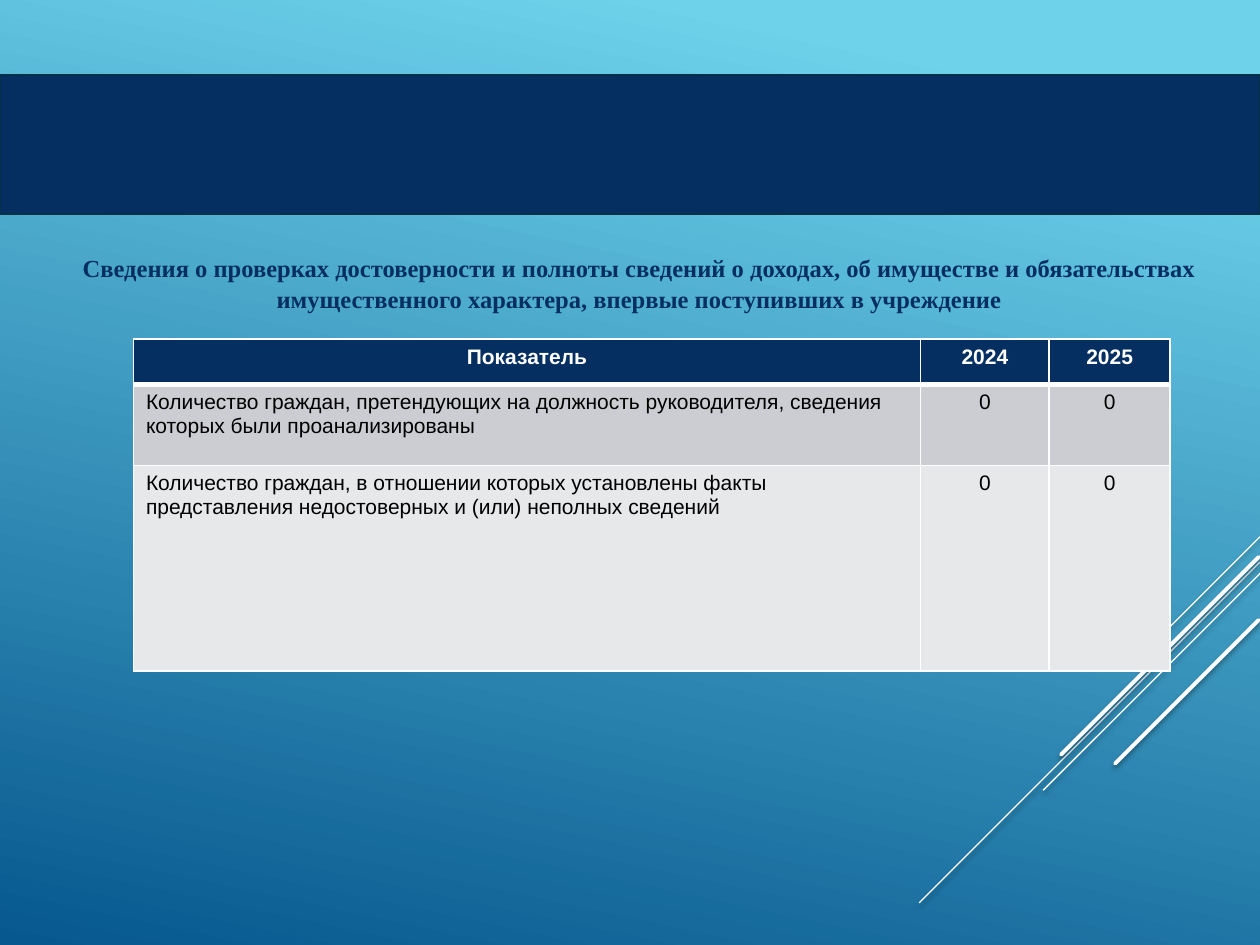
from lxml.etree import SubElement
from pptx import Presentation
from pptx.dml.color import RGBColor
from pptx.enum.shapes import MSO_CONNECTOR as Connector, MSO_SHAPE as Shape
from pptx.enum.text import MSO_ANCHOR as Anchor, MSO_AUTO_SIZE as AutoSize, PP_ALIGN as Align
from pptx.oxml.ns import qn
from pptx.util import Cm, Pt

NAVY, WHITE, BLACK = "052F61", "FFFFFF", "000000"
HEADING = (
    "Сведения о проверках достоверности и полноты сведений о доходах, об имуществе "
    "и обязательствах имущественного характера, впервые поступивших в учреждение"
)
ROWS = [
    ("Показатель", "2024", "2025"),
    ("Количество граждан, претендующих на должность руководителя, сведения "
     "которых были проанализированы", "0", "0"),
    ("Количество граждан, в отношении которых установлены факты представления "
     "недостоверных и (или) неполных сведений", "0", "0"),
]
ROW_FILLS = [NAVY, "CCCDD2", "E7E8EA"]
ROW_HEIGHTS = [0.92, 1.63, 4.15]
COLUMN_WIDTHS = [15.87, 2.59, 2.44]


def color(value):
    """Turn a hex string into a colour."""
    return RGBColor.from_string(value)


def add_run(para, text, font, size, value, bold):
    """Add one formatted run to a paragraph."""
    span = para.add_run()
    span.text = text
    span.font.name, span.font.size, span.font.bold = font, Pt(size), bold
    span.font.color.rgb = color(value)


def add_background(page):
    """Fill the page with a slanted blue gradient."""
    fill = page.background.fill
    fill.gradient()
    fill.gradient_angle = 258
    for stop, (position, value) in zip(fill.gradient_stops, [(0.1, "6ED2EB"), (1, "06588E")]):
        stop.position = position
        stop.color.rgb = color(value)


def add_shadow(line):
    """Give a line a soft shadow that falls straight down."""
    effects = SubElement(line._element.spPr, qn("a:effectLst"))
    shadow = SubElement(effects, qn("a:outerShdw"), blurRad=str(Pt(3.1)), dist=str(Pt(1.6)),
                        dir="5400000", algn="ctr", rotWithShape="0")
    tint = SubElement(shadow, qn("a:srgbClr"), val=BLACK)
    SubElement(tint, qn("a:alpha"), val="38000")


def add_diagonals(page, right, top):
    """Draw the corner lines, all falling leftwards at 45 degrees."""
    for inset, drop, reach, width in [
        (0, 0, 2.11, 0.75), (0, 0.51, 6.87, 0.75), (0, 0.74, 4.37, 0.75),
        (0.03, 0.41, 3.98, 2.25), (0.03, 1.68, 2.89, 2.25),
    ]:
        x, y = right - inset, top + drop
        line = page.shapes.add_connector(Connector.STRAIGHT, Cm(x), Cm(y), Cm(x - reach), Cm(y + reach))
        line.line.color.rgb = color(WHITE)
        line.line.width = Pt(width)
        if width > 1:
            line.line._get_or_add_ln().set("cap", "rnd")
        add_shadow(line)


def add_band(page, left, top, width, height):
    """Draw the dark band across the page."""
    band = page.shapes.add_shape(Shape.FLOWCHART_PROCESS, Cm(left), Cm(top), Cm(width), Cm(height))
    band.shadow.inherit = False
    band.fill.solid()
    band.fill.fore_color.rgb = color(NAVY)
    band.line.color.rgb = color("043148")
    band.line.width = Pt(1)


def add_heading(page, left, top, width, height):
    """Place the heading in the title placeholder."""
    box = page.shapes.title
    box.left, box.top, box.width, box.height = Cm(left), Cm(top), Cm(width), Cm(height)
    frame = box.text_frame
    frame.word_wrap = True
    frame.auto_size = AutoSize.SHAPE_TO_FIT_TEXT
    frame.vertical_anchor = Anchor.TOP
    para = frame.paragraphs[0]
    para.alignment = Align.CENTER
    para.line_spacing = 1.07
    add_run(para, HEADING, "Times New Roman", 14, NAVY, True)


def add_borders(cell, bottom):
    """Draw white borders round a cell, with the bottom width given in points."""
    properties = cell._tc.get_or_add_tcPr()
    for side, width in [("L", 1), ("R", 1), ("T", 1), ("B", bottom)]:
        edge = SubElement(properties, qn(f"a:ln{side}"), w=str(Pt(width)))
        SubElement(SubElement(edge, qn("a:solidFill")), qn("a:srgbClr"), val=WHITE)


def add_figures(page, left, top):
    """Build the table of yearly figures."""
    frame = page.shapes.add_table(len(ROWS), len(COLUMN_WIDTHS), Cm(left), Cm(top),
                                  Cm(sum(COLUMN_WIDTHS)), Cm(sum(ROW_HEIGHTS)))
    table = frame.table
    table.horz_banding = False
    for column, width in zip(table.columns, COLUMN_WIDTHS):
        column.width = Cm(width)
    for i, (texts, fill, height) in enumerate(zip(ROWS, ROW_FILLS, ROW_HEIGHTS)):
        table.rows[i].height = Cm(height)
        header = i == 0
        for j, text in enumerate(texts):
            cell = table.cell(i, j)
            add_borders(cell, 3 if header else 1)
            cell.fill.solid()
            cell.fill.fore_color.rgb = color(fill)
            para = cell.text_frame.paragraphs[0]
            para.alignment = Align.CENTER if header or j else Align.LEFT
            add_run(para, text, "Arial", 12, WHITE if header else BLACK, header)
    for cell in table.rows[1].cells:
        cell._tc.tcPr.find(qn("a:lnT")).set("w", str(Pt(3)))


def main():
    """Build the deck and save it."""
    deck = Presentation()
    deck.slide_width, deck.slide_height = Cm(25.4), Cm(19.05)
    page = deck.slides.add_slide(deck.slide_layouts[5])
    add_background(page)
    add_diagonals(page, 25.4, 10.82)
    add_band(page, 0, 1.52, 25.4, 2.8)
    add_heading(page, 0.89, 4.93, 24, 1.45)
    add_figures(page, 2.69, 6.83)
    deck.save("out.pptx")


if __name__ == "__main__":
    main()
